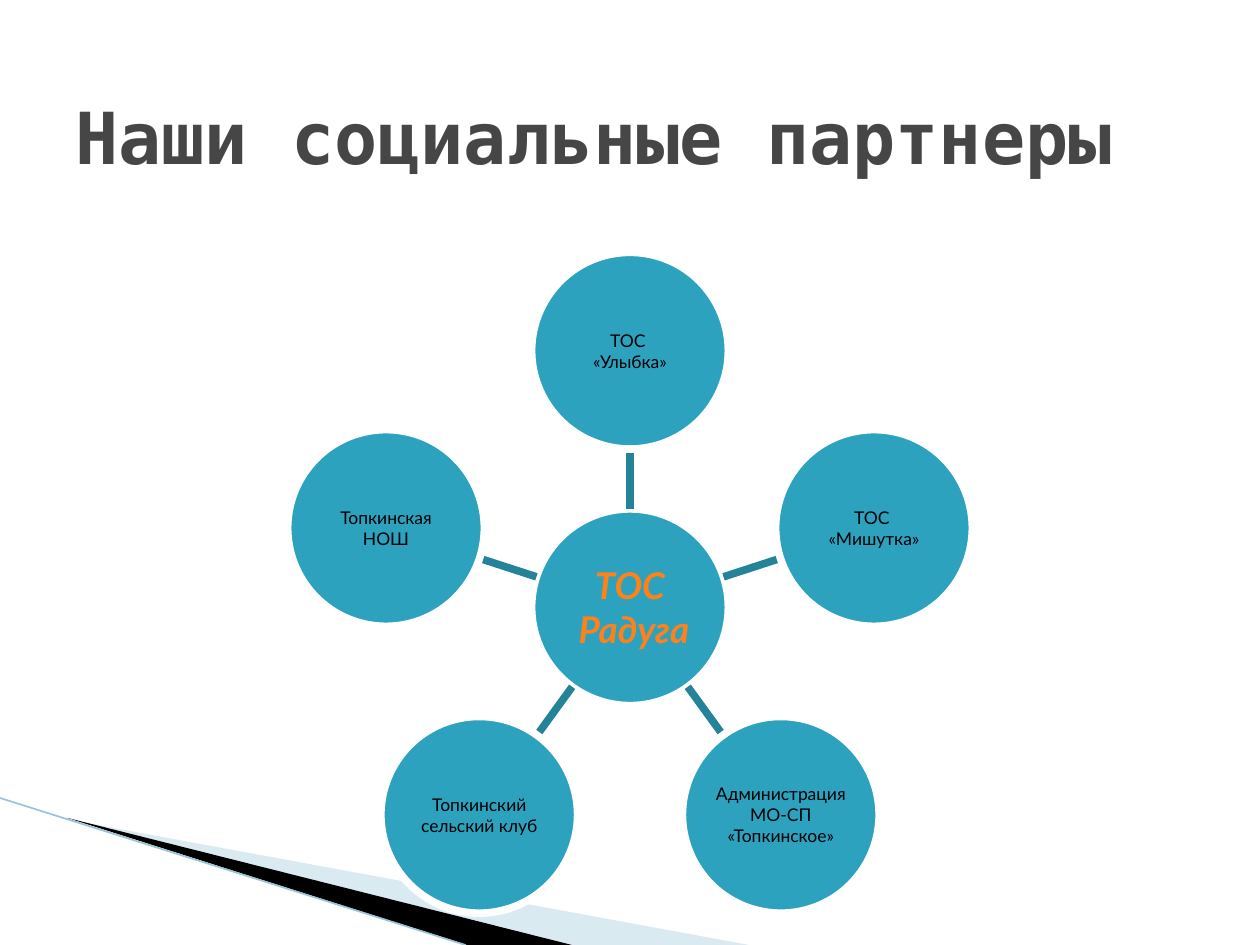
import math
from typing import NamedTuple

from lxml import etree
from pptx import Presentation
from pptx import util as u
from pptx.dml.color import RGBColor
from pptx.enum import shapes, text
from pptx.oxml import ns

TEAL = RGBColor(0x2D, 0xA2, 0xBF)
DARK_TEAL = RGBColor(0x24, 0x82, 0x99)
PALE_TEAL = RGBColor(0xA0, 0xCB, 0xDC)
EDGE_TEAL = RGBColor(0x97, 0xC5, 0xD8)
ORANGE = RGBColor(0xFF, 0x81, 0x19)
GREY = RGBColor(0x46, 0x46, 0x46)
WHITE = RGBColor(0xFF, 0xFF, 0xFF)
BLACK = RGBColor(0, 0, 0)

# Radial layout, in points
CENTER_X, CENTER_Y = 360, 347
ORBIT = 146.6
DIAMETER = 112.4
SPOKE_START, SPOKE_END = 56.2, 90.4
LINE_WIDTH = 4.33


class Style(NamedTuple):
    font: str
    size: float
    color: RGBColor
    bold: bool = False
    italic: bool = False


class Wedge(NamedTuple):
    points: list[tuple[float, float]]
    color: RGBColor
    opacity: int


TITLE_STYLE = Style("DejaVu Sans Mono", 41, GREY, bold=True)
HUB_STYLE = Style("Lato", 21, ORANGE, bold=True, italic=True)
PARTNER_STYLE = Style("Lato", 10, BLACK)

HUB = ["ТОС", " Радуга"]
PARTNERS = [  # clockwise from the top
    ["ТОС ", "«Улыбка»"],
    ["ТОС ", "«Мишутка»"],
    ["Администрация", " МО-СП ", "«Топкинское»"],
    ["Топкинский сельский клуб"],
    ["Топкинская НОШ"],
]
WEDGES = [
    Wedge([(39.6, 468.5), (428, 540), (328, 540)], PALE_TEAL, 40),
    Wedge([(38.2, 467.3), (327, 540), (267, 540)], BLACK, 100),
]


def write_lines(frame, lines: list[str], style: Style, alignment) -> None:
    frame.word_wrap = True
    frame.vertical_anchor = text.MSO_ANCHOR.MIDDLE
    for index, line in enumerate(lines):
        paragraph = frame.paragraphs[0] if index == 0 else frame.add_paragraph()
        paragraph.alignment = alignment
        run = paragraph.add_run()
        run.text = line
        run.font.name = style.font
        run.font.size = u.Pt(style.size)
        run.font.bold = style.bold
        run.font.italic = style.italic
        run.font.color.rgb = style.color


def add_wedge(slide, wedge: Wedge) -> None:
    points = [(u.Pt(x), u.Pt(y)) for x, y in wedge.points]
    builder = slide.shapes.build_freeform(*points[0])
    builder.add_line_segments(points[1:], close=True)
    shape = builder.convert_to_shape()
    shape.shadow.inherit = False
    shape.fill.solid()
    shape.fill.fore_color.rgb = wedge.color
    shape.line.fill.background()
    if wedge.opacity < 100:
        color = shape.fill._xPr.find(".//" + ns.qn("a:srgbClr"))
        etree.SubElement(color, ns.qn("a:alpha"), val=str(wedge.opacity * 1000))


def add_line(slide, start: tuple[float, float], end: tuple[float, float],
             color: RGBColor, width: float) -> None:
    ends = [u.Pt(value) for value in (*start, *end)]
    connector = slide.shapes.add_connector(shapes.MSO_CONNECTOR.STRAIGHT, *ends)
    connector.line.color.rgb = color
    connector.line.width = u.Pt(width)
    properties = connector._element.spPr
    etree.SubElement(properties, ns.qn("a:effectLst"))


def add_circle(slide, center: tuple[float, float], lines: list[str], style: Style) -> None:
    left, top = (u.Pt(value - DIAMETER / 2) for value in center)
    shape = slide.shapes.add_shape(shapes.MSO_SHAPE.OVAL, left, top,
                                   u.Pt(DIAMETER), u.Pt(DIAMETER))
    shape.shadow.inherit = False
    shape.fill.solid()
    shape.fill.fore_color.rgb = TEAL
    shape.line.color.rgb = WHITE
    shape.line.width = u.Pt(LINE_WIDTH)
    frame = shape.text_frame
    frame.margin_left = frame.margin_right = u.Pt(0.7)
    frame.margin_top = frame.margin_bottom = u.Pt(0.7)
    write_lines(frame, lines, style, text.PP_ALIGN.CENTER)


def on_ray(angle: float, distance: float) -> tuple[float, float]:
    """Point at a clockwise angle from the top, seen from the hub."""
    return (CENTER_X + distance * math.sin(angle),
            CENTER_Y - distance * math.cos(angle))


def main() -> None:
    presentation = Presentation()
    presentation.slide_width, presentation.slide_height = u.Pt(720), u.Pt(540)
    slide = presentation.slides.add_slide(presentation.slide_layouts[6])

    # Corner decoration
    for wedge in WEDGES:
        add_wedge(slide, wedge)
    add_line(slide, (0, 456), (266, 540), EDGE_TEAL, 0.95)

    # Title
    title = slide.shapes.add_textbox(u.Pt(36), u.Pt(23), u.Pt(648), u.Pt(109))
    write_lines(title.text_frame, ["Наши социальные партнеры"], TITLE_STYLE,
                text.PP_ALIGN.LEFT)

    # Hub with partners around it
    add_circle(slide, (CENTER_X, CENTER_Y), HUB, HUB_STYLE)
    for index, lines in enumerate(PARTNERS):
        angle = math.tau * index / len(PARTNERS)
        add_line(slide, on_ray(angle, SPOKE_START), on_ray(angle, SPOKE_END),
                 DARK_TEAL, LINE_WIDTH)
        add_circle(slide, on_ray(angle, ORBIT), lines, PARTNER_STYLE)

    presentation.save("out.pptx")


if __name__ == "__main__":
    main()
